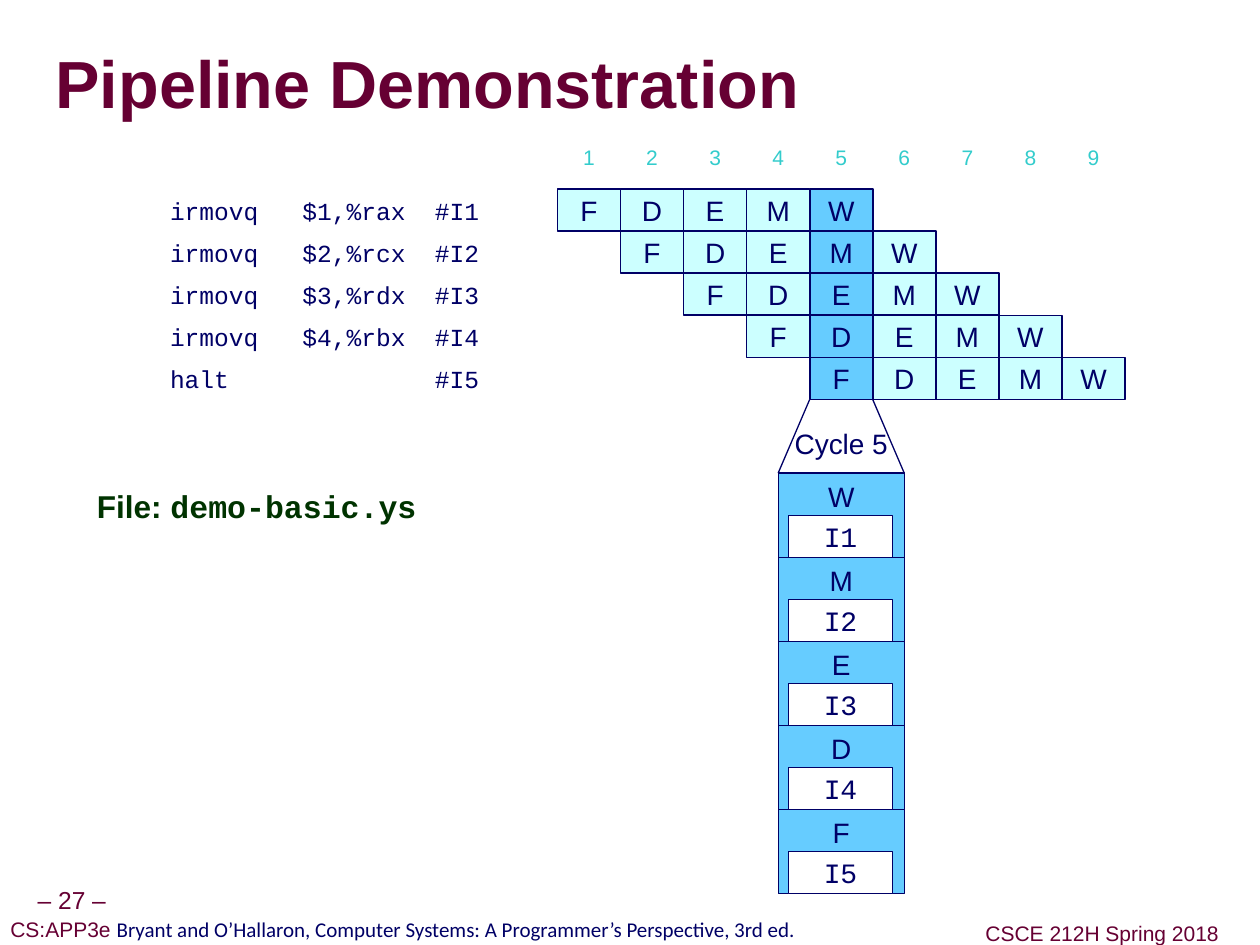
import pptx
import pptx.util
from lxml import etree
from pptx.dml.color import RGBColor
from pptx.enum.shapes import MSO_CONNECTOR, MSO_SHAPE
from pptx.enum.text import MSO_ANCHOR, PP_ALIGN
from pptx.oxml.ns import qn
from pptx.util import Inches

MAROON = RGBColor(0x66, 0x00, 0x33)
NAVY = RGBColor(0x00, 0x00, 0x66)
GREEN = RGBColor(0x00, 0x33, 0x00)
TEAL = RGBColor(0x33, 0xCC, 0xCC)
PALE = RGBColor(0xCC, 0xFF, 0xFF)
BLUE = RGBColor(0x66, 0xCC, 0xFF)
WHITE = RGBColor(0xFF, 0xFF, 0xFF)
SANS, MONO, CALIBRI = "Arial", "Courier New", "Calibri"

STAGES = "FDEMW"
PROGRAM = [
    "irmovq\t$1,%rax\t#I1",
    "irmovq\t$2,%rcx\t#I2",
    "irmovq\t$3,%rdx\t#I3",
    "irmovq\t$4,%rbx\t#I4",
    "halt\t\t#I5",
]
CODE_TABS = (1.05, 2.1)
CYCLES = 9
SHOWN_CYCLE = 5
GRID_LEFT, GRID_TOP = 4.42, 1.5
CELL_WIDTH, ROW_HEIGHT = 0.5, 1 / 3
DETAIL_LEFT, DETAIL_TOP, DETAIL_WIDTH = 6.17, 3.75, 1


class PipelineSlide:
    def __init__(self, deck):
        self.slide = deck.slides.add_slide(deck.slide_layouts[5])
        self.shapes = self.slide.shapes

    def fill_text(self, box, spans, size, align=PP_ALIGN.CENTER, anchor=MSO_ANCHOR.MIDDLE,
                  wrap=False, bold=False, spacing=1.0, insets=(0.1, 0.05)):
        """Fill a shape with one paragraph of (text, font, colour) spans."""
        frame = box.text_frame
        frame.word_wrap = wrap
        frame.vertical_anchor = anchor
        frame.margin_left = frame.margin_right = Inches(insets[0])
        frame.margin_top = frame.margin_bottom = Inches(insets[1])
        para = frame.paragraphs[0]
        para.alignment = align
        para.line_spacing = spacing
        for text, font, colour in spans:
            span = para.add_run()
            span.text = text
            span.font.name = font
            span.font.size = pptx.util.Pt(size)
            span.font.bold = bold
            span.font.color.rgb = colour
        return para

    def title(self, text, left, top, width, height):
        box = self.shapes.title
        box.left, box.top = Inches(left), Inches(top)
        box.width, box.height = Inches(width), Inches(height)
        para = self.fill_text(box, [(text, SANS, MAROON)], 38, PP_ALIGN.LEFT,
                              wrap=True, bold=True, spacing=0.87, insets=(0, 0))
        fill = para.runs[0].font._element.find(qn("a:solidFill"))
        effects = etree.Element(qn("a:effectLst"))
        shadow = etree.SubElement(effects, qn("a:outerShdw"), dist="38100", dir="2700000")
        etree.SubElement(shadow, qn("a:srgbClr"), val="969696")
        fill.addnext(effects)

    def text(self, spans, left, top, width, height, size, **style):
        box = self.shapes.add_textbox(Inches(left), Inches(top), Inches(width), Inches(height))
        return self.fill_text(box, spans, size, **style)

    def footer(self, spans, left, top, width, height, size):
        self.text(spans, left, top, width, height, size, spacing=0.9, insets=(0.05, 0.05))

    def cell(self, text, left, top, width, height, fill, line=None, size=16,
             font=SANS, colour=NAVY, **style):
        box = self.shapes.add_shape(MSO_SHAPE.RECTANGLE, Inches(left), Inches(top),
                                    Inches(width), Inches(height))
        box.shadow.inherit = False
        box.fill.solid()
        box.fill.fore_color.rgb = fill
        if line is None:
            box.line.fill.background()
        else:
            box.line.color.rgb = NAVY
            box.line.width = pptx.util.Pt(line)
        return self.fill_text(box, [(text, font, colour)], size, **style)

    def code(self, text, left, top, width, height):
        """Place an instruction whose columns are set by tab stops."""
        para = self.cell(text, left, top, width, height, WHITE, size=14, font=MONO,
                         align=PP_ALIGN.LEFT, wrap=True)
        stops = etree.SubElement(para._p.get_or_add_pPr(), qn("a:tabLst"))
        for stop in CODE_TABS:
            etree.SubElement(stops, qn("a:tab"), pos=str(Inches(stop)), algn="l")

    def line(self, x1, y1, x2, y2):
        connector = self.shapes.add_connector(MSO_CONNECTOR.STRAIGHT, Inches(x1), Inches(y1),
                                              Inches(x2), Inches(y2))
        connector.line.color.rgb = NAVY
        connector.line.width = pptx.util.Pt(0.75)
        etree.SubElement(connector._element.spPr, qn("a:effectLst"))


def column_left(cycle):
    return GRID_LEFT + (cycle - 1) * CELL_WIDTH


def draw_timeline(page):
    for cycle in range(1, CYCLES + 1):
        page.cell(str(cycle), column_left(cycle), 1.08, CELL_WIDTH, ROW_HEIGHT, WHITE,
                  size=12, colour=TEAL)
    for row, instruction in enumerate(PROGRAM):
        top = GRID_TOP + row * ROW_HEIGHT
        page.code(instruction, 1.25, top, 2.83, ROW_HEIGHT)
        for cycle, stage in enumerate(STAGES, start=row + 1):
            fill = BLUE if cycle == SHOWN_CYCLE else PALE
            page.cell(stage, column_left(cycle), top, CELL_WIDTH, ROW_HEIGHT, fill, line=1)


def draw_cycle_detail(page):
    grid_bottom = GRID_TOP + len(PROGRAM) * ROW_HEIGHT
    left = column_left(SHOWN_CYCLE)
    page.line(left, grid_bottom, DETAIL_LEFT, DETAIL_TOP)
    page.line(left + CELL_WIDTH, grid_bottom, DETAIL_LEFT + DETAIL_WIDTH, DETAIL_TOP)
    page.text([(f"Cycle {SHOWN_CYCLE}", SANS, NAVY)], DETAIL_LEFT, 3.33, DETAIL_WIDTH, 0.37,
              16, anchor=MSO_ANCHOR.TOP, wrap=True)
    for index, stage in enumerate(reversed(STAGES)):
        top = DETAIL_TOP + 2 * index * ROW_HEIGHT
        page.cell(stage, DETAIL_LEFT, top, DETAIL_WIDTH, 2 * ROW_HEIGHT, BLUE, line=0.75,
                  anchor=MSO_ANCHOR.TOP)
        page.cell(f"I{index + 1}", DETAIL_LEFT + 0.08, top + ROW_HEIGHT, 0.83, ROW_HEIGHT,
                  WHITE, line=0.75, font=MONO)


def main():
    deck = pptx.Presentation()
    deck.slide_width, deck.slide_height = Inches(9.99), Inches(7.49)
    page = PipelineSlide(deck)
    page.footer([("– 27 –", SANS, MAROON)], 0.24, 6.99, 0.66, 0.31, 14)
    page.footer([("CS:APP3e ", SANS, MAROON),
                 ("Bryant and O’Hallaron, Computer Systems: A Programmer’s Perspective, 3rd ed.",
                  CALIBRI, NAVY)], 0, 7.24, 6.39, 0.28, 12)
    page.footer([("CSCE 212H Spring 2018", SANS, MAROON)], 7.76, 7.27, 1.96, 0.28, 12)
    page.title("Pipeline Demonstration", 0.44, 0.27, 9.52, 0.85)
    page.text([("File: ", SANS, GREEN), ("demo-basic.ys", MONO, GREEN)], 0.67, 3.83, 3.33, 0.58,
              18, align=PP_ALIGN.LEFT, anchor=MSO_ANCHOR.TOP, wrap=True, bold=True, spacing=0.95)
    draw_timeline(page)
    draw_cycle_detail(page)
    deck.save("out.pptx")


if __name__ == "__main__":
    main()
